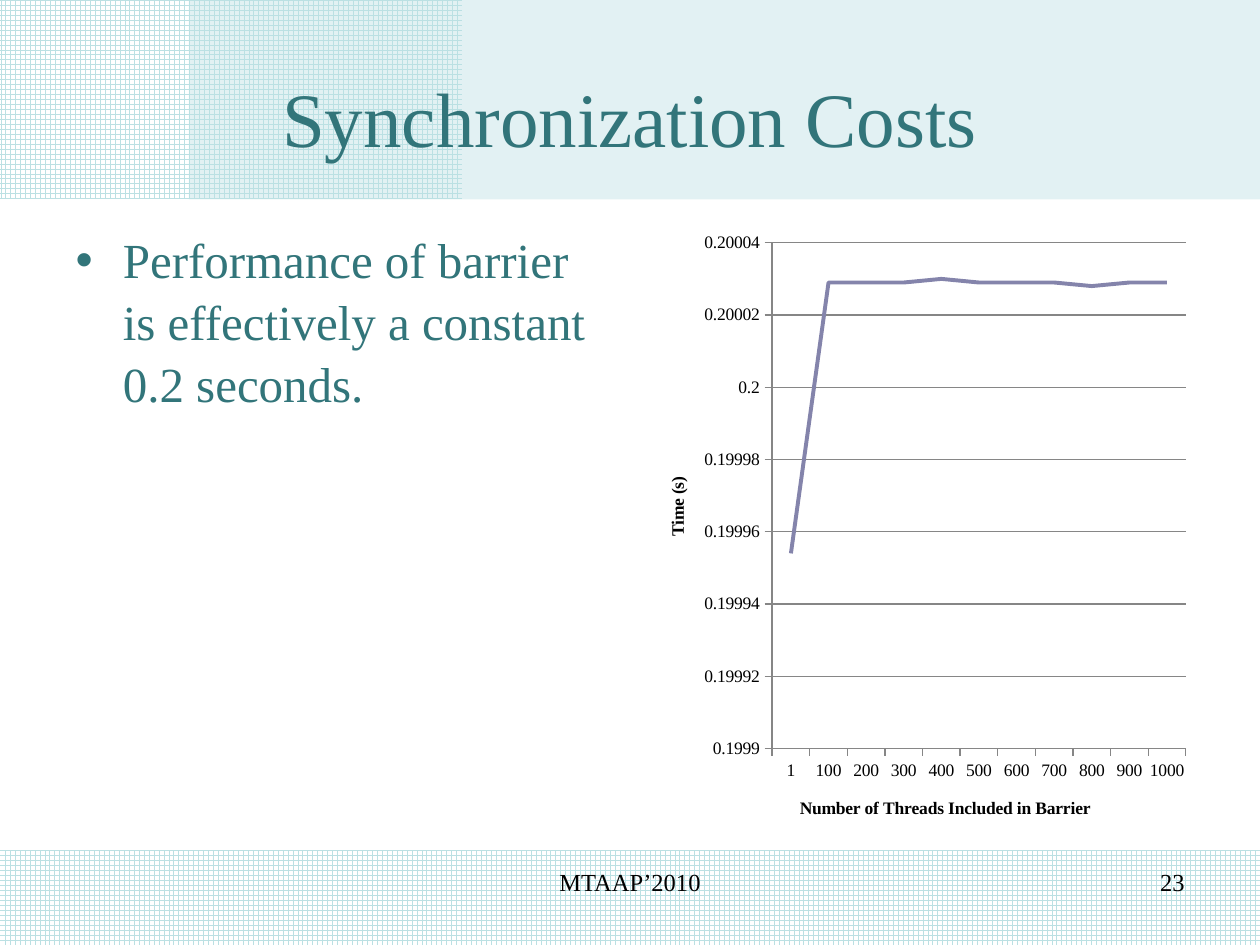
from typing import NamedTuple, Optional

import lxml.etree
import pptx
import pptx.chart.data
import pptx.dml.color
import pptx.enum.chart
import pptx.enum.dml
import pptx.enum.shapes
import pptx.enum.text
import pptx.oxml.ns
import pptx.util

Pt = pptx.util.Pt
RGBColor = pptx.dml.color.RGBColor
Align = pptx.enum.text.PP_ALIGN
Anchor = pptx.enum.text.MSO_ANCHOR
qn = pptx.oxml.ns.qn

TEAL = RGBColor(0x32, 0x75, 0x7A)
PALE_TEAL = RGBColor(0xBB, 0xE0, 0xE3)
WHITE = RGBColor(0xFF, 0xFF, 0xFF)
BLACK = RGBColor(0, 0, 0)
GRAY = RGBColor(0x86, 0x86, 0x86)
LINE_VIOLET = RGBColor(0x84, 0x84, 0xAB)
FONT = "Times New Roman"


class Box(NamedTuple):
    """Left, top, width and height in points."""
    left: float
    top: float
    width: float
    height: float

    def lengths(self) -> list:
        return [Pt(value) for value in self]


class Band(NamedTuple):
    box: Box
    opacity: Optional[int] = None  # percent; None means a grid pattern


BANDS = [
    Band(Box(0, 486, 720, 54)),
    Band(Box(0, 0, 264, 114)),
    Band(Box(108, 0, 612, 114), opacity=42),
]


def draw_band(slide, band: Band) -> None:
    shape = slide.shapes.add_shape(
        pptx.enum.shapes.MSO_SHAPE.FLOWCHART_PROCESS, *band.box.lengths())
    shape.shadow.inherit = False
    shape.line.fill.background()
    if band.opacity is None:
        shape.fill.patterned()
        shape.fill.pattern = pptx.enum.dml.MSO_PATTERN.LARGE_GRID
        shape.fill.fore_color.rgb = PALE_TEAL
        shape.fill.back_color.rgb = WHITE
    else:
        shape.fill.solid()
        shape.fill.fore_color.rgb = PALE_TEAL
        color = shape.element.spPr.find(qn("a:solidFill")).find(qn("a:srgbClr"))
        lxml.etree.SubElement(color, qn("a:alpha"), val=str(band.opacity * 1000))


def set_font(font, size: float, color: RGBColor, bold: bool = False) -> None:
    font.name = FONT
    font.size = Pt(size)
    font.bold = bold
    font.color.rgb = color


def write(shape, text: str, *, size: float, color: RGBColor, align=Align.LEFT,
          anchor=Anchor.TOP, bullet: bool = False, spacing: float = 1.0) -> None:
    frame = shape.text_frame
    frame.word_wrap = True
    frame.auto_size = pptx.enum.text.MSO_AUTO_SIZE.NONE
    frame.vertical_anchor = anchor
    paragraph = frame.paragraphs[0]
    paragraph.alignment = align
    paragraph.line_spacing = spacing
    paragraph.space_before = Pt(0)
    if bullet:
        properties = paragraph._p.get_or_add_pPr()
        properties.set("marL", str(Pt(27)))
        properties.set("indent", str(-Pt(27)))
        lxml.etree.SubElement(properties, qn("a:buChar"), char="•")
    run = paragraph.add_run()
    run.text = text
    set_font(run.font, size, color)


def place(slide, shape, box: Box) -> None:
    """Move a placeholder to its box, in front of the bands."""
    shape.left, shape.top, shape.width, shape.height = box.lengths()
    slide.shapes.element.append(shape.element)


def style_axis(axis, title: str) -> None:
    axis.has_title = True
    axis.axis_title.text_frame.text = title
    run = axis.axis_title.text_frame.paragraphs[0].runs[0]
    set_font(run.font, 10, BLACK, bold=True)
    set_font(axis.tick_labels.font, 10, BLACK)
    axis.major_tick_mark = pptx.enum.chart.XL_TICK_MARK.OUTSIDE
    axis.minor_tick_mark = pptx.enum.chart.XL_TICK_MARK.NONE
    axis.format.line.color.rgb = GRAY
    axis.format.line.width = Pt(0.75)


def draw_barrier_chart(slide, box: Box) -> None:
    barrier_times = pptx.chart.data.CategoryChartData(number_format="General")
    barrier_times.categories = ["1"] + [str(n) for n in range(100, 1001, 100)]
    barrier_times.add_series("Series 1", [
        0.199954, 0.200029, 0.200029, 0.200029, 0.20003, 0.200029,
        0.200029, 0.200029, 0.200028, 0.200029, 0.200029])
    chart = slide.shapes.add_chart(
        pptx.enum.chart.XL_CHART_TYPE.LINE_STACKED,
        *box.lengths(), barrier_times).chart
    chart.has_title = False
    chart.has_legend = False
    set_font(chart.font, 10, BLACK)

    style_axis(chart.category_axis, "Number of Threads Included in Barrier")
    seconds = chart.value_axis
    style_axis(seconds, "Time (s)")
    seconds.minimum_scale = 0.1999
    seconds.maximum_scale = 0.20004
    seconds.major_unit = 0.00002
    seconds.has_major_gridlines = True
    seconds.major_gridlines.format.line.color.rgb = GRAY
    seconds.major_gridlines.format.line.width = Pt(0.75)

    plot = chart.plots[0]
    plot.vary_by_categories = False
    times = plot.series[0]
    times.smooth = False
    times.format.line.color.rgb = LINE_VIOLET
    times.format.line.width = Pt(2.25)


def main() -> None:
    deck = pptx.Presentation()
    deck.slide_width, deck.slide_height = Pt(720), Pt(540)
    slide = deck.slides.add_slide(deck.slide_layouts[1])

    # Background bands
    for band in BANDS:
        draw_band(slide, band)

    # Title and finding
    heading = slide.shapes.title
    finding = slide.placeholders[1]
    place(slide, heading, Box(36, 21.6, 648, 90))
    write(heading, "Synchronization Costs", size=44, color=TEAL,
          align=Align.CENTER, anchor=Anchor.MIDDLE)
    place(slide, finding, Box(36, 126, 318, 356.4))
    write(finding, "Performance of barrier is effectively a constant 0.2 seconds.",
          size=28, color=TEAL, bullet=True, spacing=1.05)

    # Footer
    venue = slide.shapes.add_textbox(*Box(246, 492, 228, 37.5).lengths())
    write(venue, "MTAAP’2010", size=14, color=BLACK, align=Align.CENTER)
    page_number = slide.shapes.add_textbox(*Box(516, 492, 168, 37.5).lengths())
    write(page_number, "23", size=14, color=BLACK, align=Align.RIGHT)

    # Barrier timing chart
    draw_barrier_chart(slide, Box(366, 126, 318, 356.4))
    deck.save("out.pptx")


if __name__ == "__main__":
    main()
